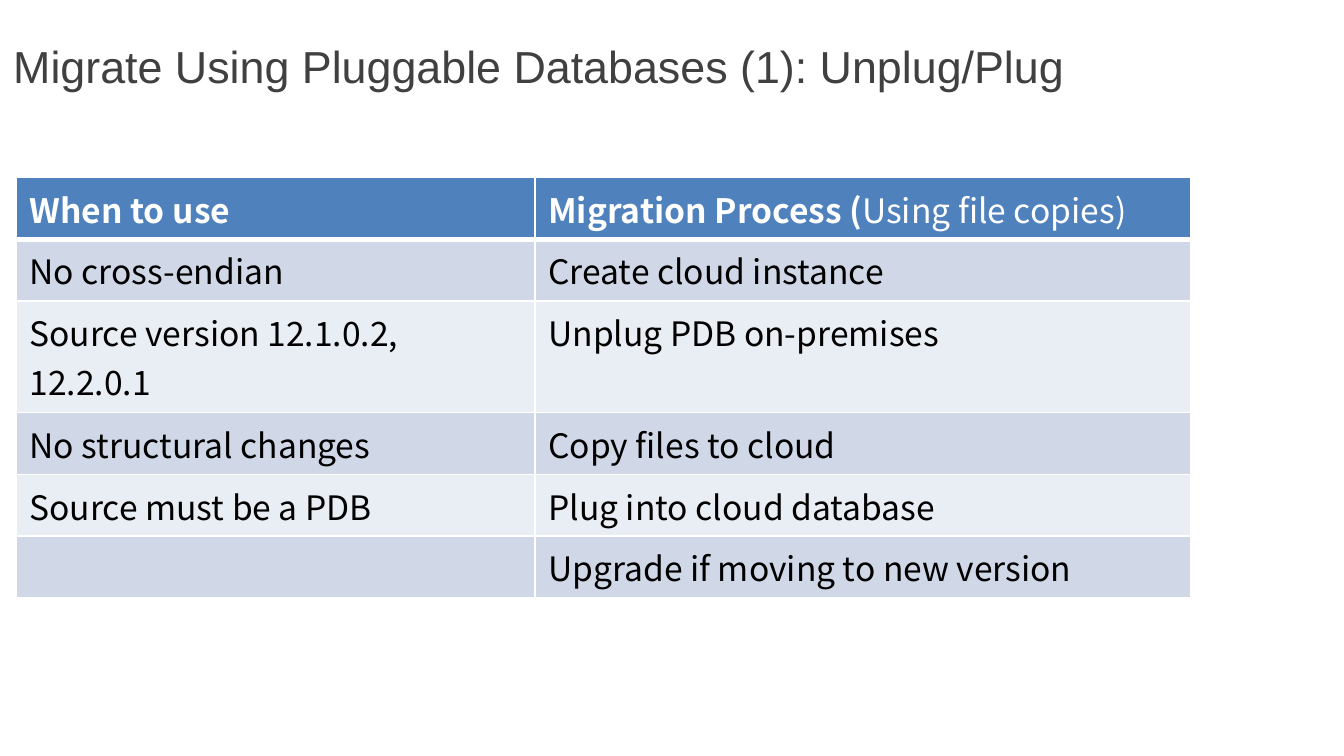
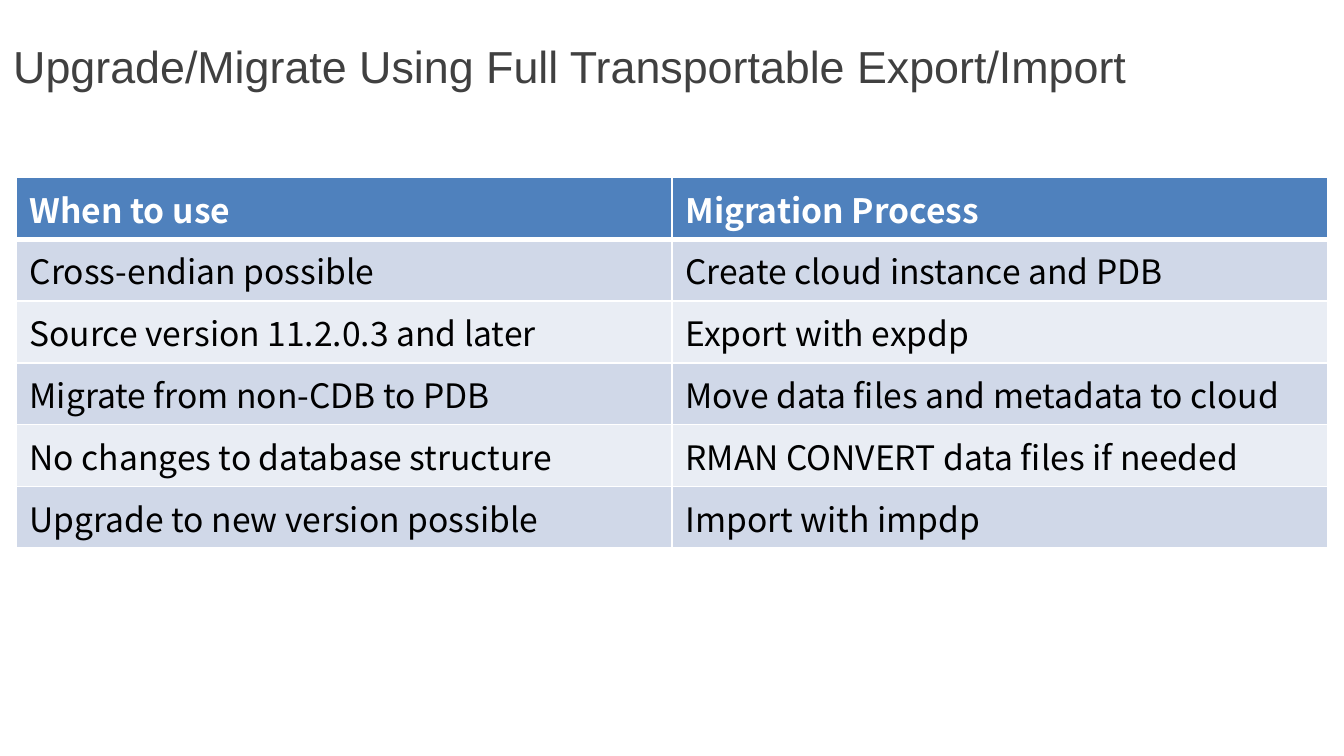
from pptx import Presentation
from pptx.util import Inches, Pt
from pptx.dml.color import RGBColor as RGB
from pptx.enum.text import MSO_ANCHOR as Anchor
from pptx.oxml.ns import qn
from lxml.etree import SubElement as Sub

HUES = {"title": "404040", "head": "4F81BD", "odd": "D0D8E8",
        "even": "E9EDF4", "white": "FFFFFF", "text": "000000"}
ROW, TALL = 0.46, 0.83  # heights of rows with one and two lines

# Each slide: title, column widths, rows with two lines, cells.
# A cell is a list of runs; in the header only the first run is bold.
DECK = [
    ("Migrate Using Pluggable Databases (1): Unplug/Plug", [3.86, 4.88], [2], [
        (["When to use"], ["Migration Process (", "Using file copies)"]),
        (["No cross-endian"], ["Create cloud instance"]),
        (["Source version 12.1.0.2, 12.2.0.1"], ["Unplug PDB on-premises"]),
        (["No structural changes"], ["Copy files to cloud"]),
        (["Source must be a PDB"], ["Plug into cloud database"]),
        ([], ["Upgrade if moving to new version"]),
    ]),
    ("Upgrade/Migrate Using Full Transportable Export/Import",
     [4.88, 4.88], [], [
        (["When to use"], ["Migration Process"]),
        (["Cross-endian possible"], ["Create cloud instance and PDB"]),
        (["Source version 11.2.0.3 and later"], ["Export with expdp"]),
        (["Migrate from non-CDB to PDB"],
         ["Move data files and metadata to cloud"]),
        (["No changes to database structure"],
         ["RMAN CONVERT data files if needed"]),
        (["Upgrade to new version possible"], ["Import with impdp"]),
     ]),
]


def style(font, name, size, hue):
    font.name, font.size = name, Pt(size)
    font.color.rgb = RGB.from_string(HUES[hue])


def frame(cell, row):
    """Draw white borders, with a thick rule between header and body."""
    props = cell._tc.get_or_add_tcPr()
    top, base = 3 if row == 1 else 1, 3 if row == 0 else 1
    for side, width in zip("LRTB", (1, 1, top, base)):
        line = Sub(props, qn("a:ln" + side), w=str(Pt(width)))
        fill = Sub(line, qn("a:solidFill"))
        Sub(fill, qn("a:srgbClr"), val=HUES["white"])


prs = Presentation()
prs.slide_width = Inches(10)
prs.slide_height = prs.slide_width * 9 // 16

for title, widths, tall, rows in DECK:
    slide = prs.slides.add_slide(prs.slide_layouts[6])

    box = slide.shapes.add_textbox(0, 0, Inches(10), Inches(0.97)).text_frame
    box.word_wrap = True
    box.vertical_anchor = Anchor.MIDDLE
    box.text = title
    style(box.paragraphs[0].font, "Arial", 24, "title")

    highs = [TALL if r in tall else ROW for r in range(len(rows))]
    table = slide.shapes.add_table(
        len(rows), len(widths), Inches(0.12), Inches(1.32),
        Inches(sum(widths)), Inches(sum(highs))).table
    table.first_row = table.horz_banding = False
    for col, width in zip(table.columns, widths):
        col.width = Inches(width)

    for r, row in enumerate(rows):
        table.rows[r].height = Inches(highs[r])
        band = "head" if r == 0 else "odd" if r % 2 else "even"
        for c, runs in enumerate(row):
            cell = table.cell(r, c)
            frame(cell, r)
            cell.fill.solid()
            cell.fill.fore_color.rgb = RGB.from_string(HUES[band])
            para = cell.text_frame.paragraphs[0]
            style(para.font, "Noto Sans CJK KR", 18,
                  "text" if r else "white")
            for n, words in enumerate(runs):
                run = para.add_run()
                run.text = words
                run.font.bold = r == 0 and n == 0

prs.save("out.pptx")
